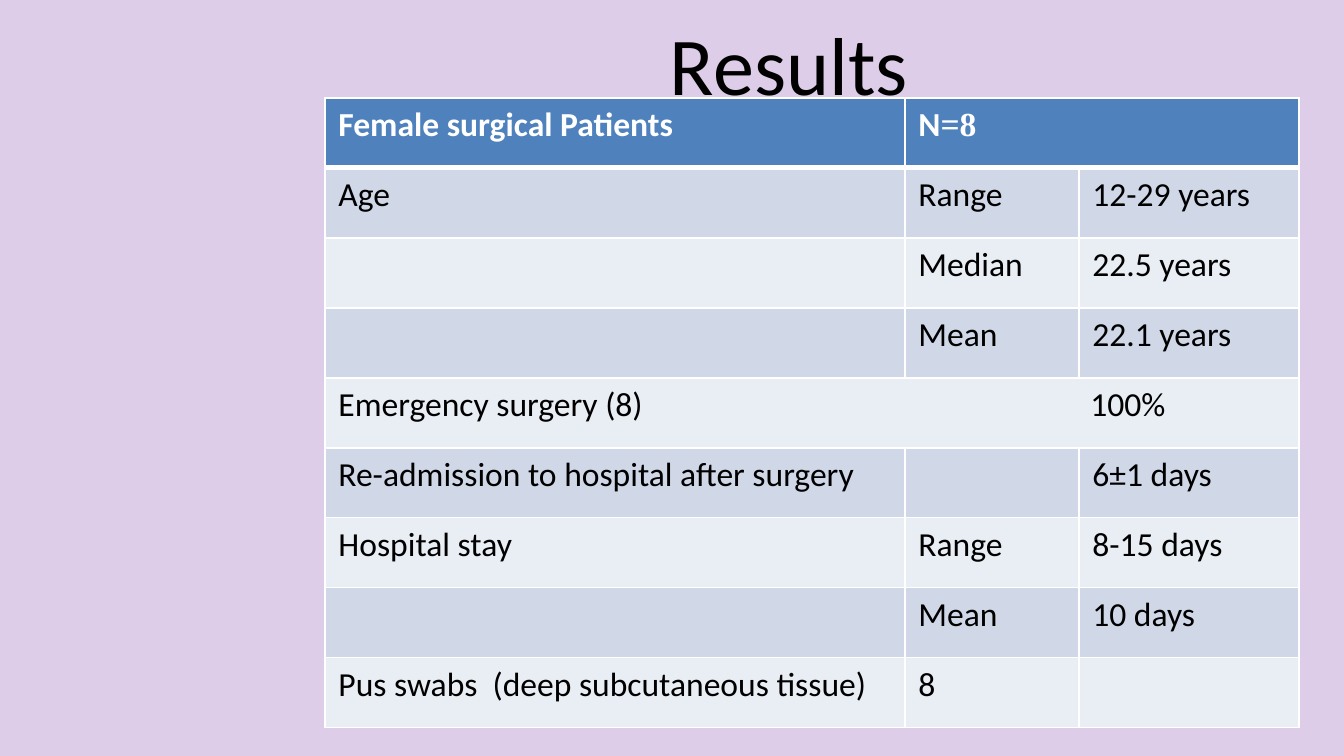
from lxml import etree
from pptx import Presentation
from pptx.dml.color import RGBColor
from pptx.enum.text import MSO_ANCHOR, PP_ALIGN
from pptx.oxml.ns import qn
from pptx.util import Pt

MIDDLE = MSO_ANCHOR.MIDDLE
TOP = MSO_ANCHOR.TOP
CENTER = PP_ALIGN.CENTER
LEFT = PP_ALIGN.LEFT

EMU_PER_PX = 914400 / 134.4
SLIDE_SIZE = (1344, 756)

LILAC = RGBColor(0xDD, 0xCD, 0xE8)
BLACK = RGBColor(0x00, 0x00, 0x00)
WHITE = RGBColor(0xFF, 0xFF, 0xFF)
HEADER_BLUE = RGBColor(0x4F, 0x81, 0xBD)
BANDS = (RGBColor(0xD0, 0xD8, 0xE8), RGBColor(0xE9, 0xED, 0xF4))

BODY_FONT = "Calibri"
SERIF_FONT = "Times New Roman"

COLUMN_WIDTHS = (580, 174, 220)
ROW_HEIGHT = 70
PERCENT_TAB = 752
THIN, THICK = 1, 3

ROWS = (
    ("Female surgical Patients", "N", ""),
    ("Age", "Range", "12-29 years"),
    ("", "Median", "22.5 years"),
    ("", "Mean", "22.1 years"),
    ("Emergency surgery (8)\t100%", "", ""),
    ("Re-admission to hospital after surgery", "", "6±1 days"),
    ("Hospital stay", "Range", "8-15 days"),
    ("", "Mean", "10 days"),
    ("Pus swabs  (deep subcutaneous tissue)", "8", ""),
)
HEADER_ROW, EMERGENCY_ROW = 0, 4


def px(length):
    return round(length * EMU_PER_PX)


def add_text(para, text, *, size=18, font=BODY_FONT, color=BLACK, bold=False, align=LEFT):
    para.alignment = align
    span = para.add_run()
    span.text = text
    span.font.size = Pt(size)
    span.font.name = font
    span.font.bold = bold
    span.font.color.rgb = color


def add_title(page, text):
    box = page.shapes.add_textbox(px(302), px(0), px(974), px(126))
    frame = box.text_frame
    frame.word_wrap = True
    frame.vertical_anchor = MIDDLE
    add_text(frame.paragraphs[0], text, size=44, align=CENTER)


def add_tab_stop(para, position):
    properties = para._p.get_or_add_pPr()
    stops = etree.SubElement(properties, qn("a:tabLst"))
    etree.SubElement(stops, qn("a:tab"), pos=str(px(position)), algn="l")


def set_borders(cell, *, top=THIN, bottom=THIN):
    properties = cell._tc.get_or_add_tcPr()
    sides = (("L", THIN), ("R", THIN), ("T", top), ("B", bottom))
    # Border lines come before the fill in the cell properties
    for index, (side, width) in enumerate(sides):
        line = etree.Element(qn(f"a:ln{side}"), w=str(Pt(width)))
        fill = etree.SubElement(line, qn("a:solidFill"))
        etree.SubElement(fill, qn("a:srgbClr"), val=str(WHITE))
        properties.insert(index, line)


def style_cell(cell, row):
    header = row == HEADER_ROW
    cell.vertical_anchor = TOP
    cell.fill.solid()
    cell.fill.fore_color.rgb = HEADER_BLUE if header else BANDS[(row - 1) % 2]
    set_borders(
        cell,
        top=THICK if row == HEADER_ROW + 1 else THIN,
        bottom=THICK if header else THIN,
    )


def add_results_table(page):
    frame = page.shapes.add_table(
        len(ROWS), len(COLUMN_WIDTHS), px(325), px(98),
        px(sum(COLUMN_WIDTHS)), px(ROW_HEIGHT * len(ROWS)),
    )
    table = frame.table
    table.horz_banding = False
    for column, width in zip(table.columns, COLUMN_WIDTHS):
        column.width = px(width)

    # Merged cells: patient count and emergency surgery
    table.cell(HEADER_ROW, 1).merge(table.cell(HEADER_ROW, 2))
    table.cell(EMERGENCY_ROW, 0).merge(table.cell(EMERGENCY_ROW, 2))
    add_tab_stop(table.cell(EMERGENCY_ROW, 0).text_frame.paragraphs[0], PERCENT_TAB)

    header_format = {"color": WHITE, "bold": True}
    for row, texts in enumerate(ROWS):
        table.rows[row].height = px(ROW_HEIGHT)
        text_format = header_format if row == HEADER_ROW else {}
        for column, text in enumerate(texts):
            cell = table.cell(row, column)
            style_cell(cell, row)
            if text:
                add_text(cell.text_frame.paragraphs[0], text, **text_format)

    # The patient count is set in a serif face
    count = table.cell(HEADER_ROW, 1).text_frame.paragraphs[0]
    add_text(count, "=8", font=SERIF_FONT, **header_format)


def main():
    deck = Presentation()
    deck.slide_width, deck.slide_height = (px(side) for side in SLIDE_SIZE)
    page = deck.slides.add_slide(deck.slide_layouts[6])

    # Background
    page.background.fill.solid()
    page.background.fill.fore_color.rgb = LILAC

    add_title(page, "Results")
    add_results_table(page)
    deck.save("out.pptx")


if __name__ == "__main__":
    main()
